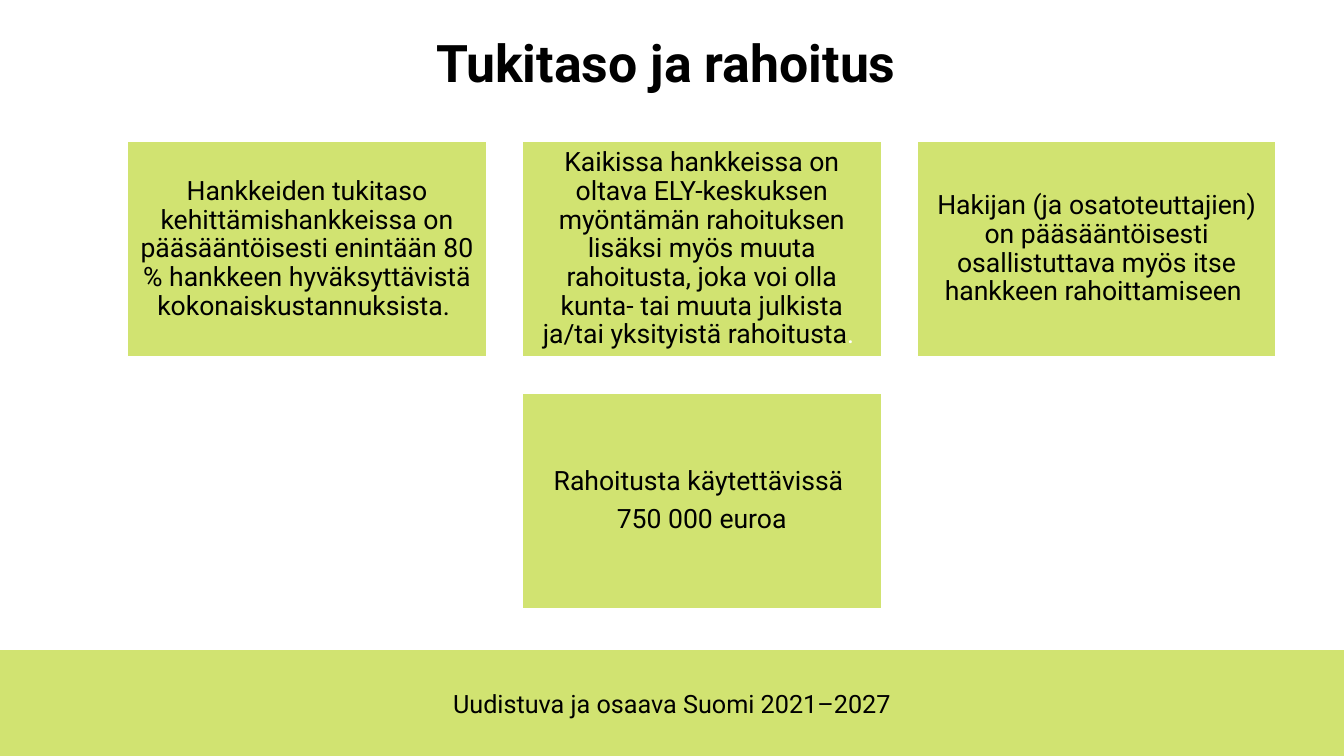
import pptx
import pptx.util
import pptx.dml.color
import pptx.enum.shapes
import pptx.enum.text

Cm = pptx.util.Cm
Pt = pptx.util.Pt
LIME = pptx.dml.color.RGBColor(0xD1, 0xE3, 0x71)
BLACK = pptx.dml.color.RGBColor(0, 0, 0)
WHITE = pptx.dml.color.RGBColor(0xFF, 0xFF, 0xFF)
FONT = "Roboto"
SLIDE_WIDTH, SLIDE_HEIGHT = 33.87, 19.05

CARD_WIDTH, CARD_HEIGHT = 9.07, 5.44
COLUMN_PITCH, ROW_PITCH = 9.95, 6.35
CARDS_LEFT, CARDS_TOP = 3.2, 3.56
CARDS = [
    (0, 0, [["Hankkeiden tukitaso kehittämishankkeissa on pääsääntöisesti enintään "
             "80 % hankkeen hyväksyttävistä kokonaiskustannuksista. "]]),
    (1, 0, [["Kaikissa hankkeissa on oltava ELY-keskuksen myöntämän rahoituksen "
             "lisäksi myös muuta rahoitusta, joka voi olla kunta- tai muuta "
             "julkista ja/tai yksityistä rahoitusta", ". "]]),
    (2, 0, [["Hakijan (ja osatoteuttajien) on pääsääntöisesti osallistuttava "
             "myös itse hankkeen rahoittamiseen "]]),
    (1, 1, [["Rahoitusta käytettävissä "], ["750 000 euroa"]]),
]


def set_frame(frame, anchor, inset):
    frame.word_wrap = True
    frame.auto_size = pptx.enum.text.MSO_AUTO_SIZE.NONE
    frame.vertical_anchor = anchor
    frame.margin_left = frame.margin_right = Cm(inset)
    frame.margin_top = frame.margin_bottom = Cm(inset)


def format_run(run, size, color=BLACK, bold=False):
    run.font.name = FONT
    run.font.size = Pt(size)
    run.font.bold = bold
    run.font.color.rgb = color


def add_panel(slide, left, top, width, height):
    panel = slide.shapes.add_shape(
        pptx.enum.shapes.MSO_SHAPE.RECTANGLE, Cm(left), Cm(top), Cm(width), Cm(height))
    panel.shadow.inherit = False
    panel.fill.solid()
    panel.fill.fore_color.rgb = LIME
    panel.line.fill.background()
    return panel


def add_footer(slide, left, top, width, height):
    band = add_panel(slide, left, top, width, height)
    frame = band.text_frame
    set_frame(frame, pptx.enum.text.MSO_ANCHOR.MIDDLE, 0)
    frame.text = "Uudistuva ja osaava Suomi 2021–2027"
    slogan = frame.paragraphs[0]
    slogan.alignment = pptx.enum.text.PP_ALIGN.CENTER
    format_run(slogan.runs[0], 18)


def add_title(slide, left, top, width, height):
    title = slide.shapes.title
    title.left, title.top = Cm(left), Cm(top)
    title.width, title.height = Cm(width), Cm(height)
    frame = title.text_frame
    set_frame(frame, pptx.enum.text.MSO_ANCHOR.BOTTOM, 0)
    frame.margin_bottom = Cm(1.53)
    frame.text = "Tukitaso ja rahoitus "
    heading = frame.paragraphs[0]
    heading.alignment = pptx.enum.text.PP_ALIGN.CENTER
    heading.line_spacing = 0.9
    format_run(heading.runs[0], 37, bold=True)


def add_card(slide, left, top, width, height, paragraphs):
    card = add_panel(slide, left, top, width, height)
    card.line.color.rgb = WHITE
    card.line.width = Pt(1.5)
    frame = card.text_frame
    set_frame(frame, pptx.enum.text.MSO_ANCHOR.MIDDLE, 0.2)
    for index, pieces in enumerate(paragraphs):
        statement = frame.add_paragraph() if index else frame.paragraphs[0]
        statement.alignment = pptx.enum.text.PP_ALIGN.CENTER
        statement.line_spacing = 0.9
        statement.space_after = Pt(6.65)
        for piece, color in zip(pieces, (BLACK, WHITE)):
            run = statement.add_run()
            run.text = piece
            format_run(run, 19, color)


def add_cards(slide, left, top):
    for column, row, paragraphs in CARDS:
        add_card(slide, left + column * COLUMN_PITCH, top + row * ROW_PITCH,
                 CARD_WIDTH, CARD_HEIGHT, paragraphs)


def main():
    deck = pptx.Presentation()
    deck.slide_width, deck.slide_height = Cm(SLIDE_WIDTH), Cm(SLIDE_HEIGHT)
    slide = deck.slides.add_slide(deck.slide_layouts.get_by_name("Title Only"))
    add_footer(slide, 0, 16.38, SLIDE_WIDTH, SLIDE_HEIGHT - 16.38)
    add_title(slide, 2.34, 1.02, 29.21, 2.87)
    add_cards(slide, CARDS_LEFT, CARDS_TOP)
    deck.save("out.pptx")


if __name__ == "__main__":
    main()
